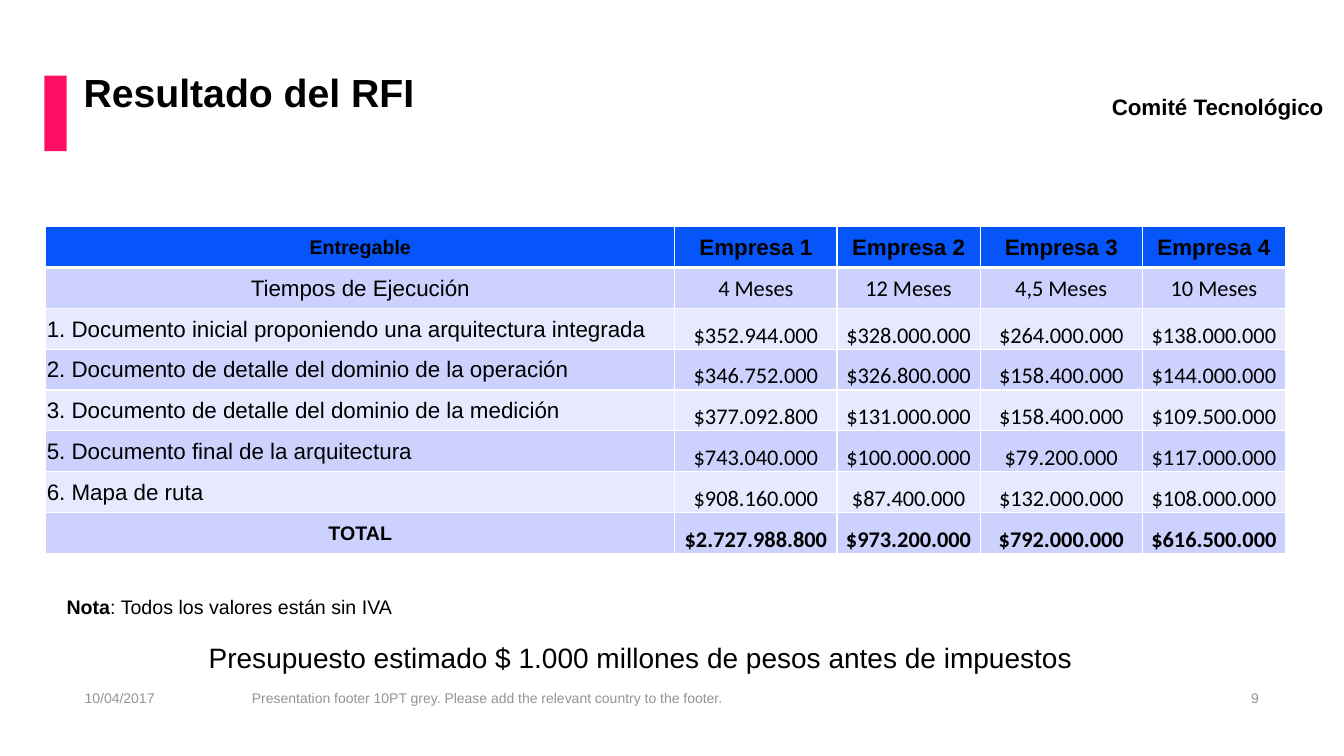
"""Build the RFI results slide: vendor price table, notes and footer."""
from dataclasses import dataclass

from lxml.etree import SubElement
from pptx import Presentation
from pptx.dml.color import RGBColor
from pptx.enum.shapes import MSO_SHAPE
from pptx.enum.text import MSO_ANCHOR, MSO_AUTO_SIZE, PP_ALIGN
from pptx.oxml.ns import qn
from pptx.slide import Slide
from pptx.table import _Cell
from pptx.text.text import TextFrame
from pptx.util import Pt

BLACK, GREY, WHITE = "000000", "949494", "FFFFFF"
PINK, BLUE = "FE0F64", "0655FA"
BANDS = ("E7E9FE", "CCD1FD")
COLUMN_WIDTHS = (449.28, 115.92, 102.24, 115.92, 102.24)
ROW_HEIGHT = 29.16
ROWS = (
    ("Entregable", "Empresa 1", "Empresa 2", "Empresa 3", "Empresa 4"),
    ("Tiempos de Ejecución", "4 Meses", "12 Meses", "4,5 Meses", "10 Meses"),
    ("1. Documento inicial proponiendo una arquitectura integrada",
     "$352.944.000", "$328.000.000", "$264.000.000", "$138.000.000"),
    ("2. Documento de detalle del dominio de la operación",
     "$346.752.000", "$326.800.000", "$158.400.000", "$144.000.000"),
    ("3. Documento de detalle del dominio de la medición",
     "$377.092.800", "$131.000.000", "$158.400.000", "$109.500.000"),
    ("5. Documento final de la arquitectura",
     "$743.040.000", "$100.000.000", "$79.200.000", "$117.000.000"),
    ("6. Mapa de ruta",
     "$908.160.000", "$87.400.000", "$132.000.000", "$108.000.000"),
    ("TOTAL", "$2.727.988.800", "$973.200.000", "$792.000.000", "$616.500.000"),
)


@dataclass(frozen=True)
class Label:
    text: str
    left: float
    top: float
    width: float
    height: float
    size: float
    color: str = BLACK
    bold: bool = False
    lead: str = ""
    align: PP_ALIGN = PP_ALIGN.LEFT
    anchor: MSO_ANCHOR = MSO_ANCHOR.TOP
    spacing: float = 1.0
    wrap: bool = True


def footer(text: str, left: float, width: float, align: PP_ALIGN = PP_ALIGN.LEFT) -> Label:
    return Label(text, left, 493.2, width, 12.24, 10, GREY, align=align,
                 anchor=MSO_ANCHOR.MIDDLE, spacing=0.9)


TITLE = Label("Resultado del RFI", 59.76, 52.56, 659.52, 30.96, 28, bold=True, spacing=0.9)
LABELS = (
    Label("Comité Tecnológico", 794.16, 66.24, 153.36, 19.44, 16, bold=True, wrap=False),
    footer("10/04/2017", 60.48, 118.8),
    footer("Presentation footer 10PT grey. Please add the relevant country to the footer.",
           180, 660.24),
    footer("9", 839.52, 59.76, PP_ALIGN.RIGHT),
    Label("Presupuesto estimado $ 1.000 millones de pesos antes de impuestos",
          149.04, 457.2, 673.92, 24.48, 20),
    Label(": Todos los valores están sin IVA", 47.52, 424.8, 495.36, 17.28, 14, lead="Nota"),
)


def rgb(color: str) -> RGBColor:
    return RGBColor.from_string(color)


def write_text(frame: TextFrame, text: str, *, size: float, font: str = "Arial",
               color: str = BLACK, bold: bool = False, lead: str = "",
               align: PP_ALIGN = PP_ALIGN.LEFT, spacing: float = 1.0) -> None:
    para = frame.paragraphs[0]
    para.alignment = align
    para.line_spacing = spacing
    for words, heavy in ((lead, True), (text, bold)):
        if words:
            span = para.add_run()
            span.text = words
            span.font.name = font
            span.font.size = Pt(size)
            span.font.bold = heavy
            span.font.color.rgb = rgb(color)


def draw_label(page: Slide, label: Label, is_title: bool = False) -> None:
    place = [Pt(value) for value in (label.left, label.top, label.width, label.height)]
    if is_title:
        box = page.shapes.title
        box.left, box.top, box.width, box.height = place
    else:
        box = page.shapes.add_textbox(*place)
    frame = box.text_frame
    frame.margin_left = frame.margin_top = frame.margin_right = frame.margin_bottom = 0
    frame.word_wrap = label.wrap
    frame.auto_size = MSO_AUTO_SIZE.NONE
    frame.vertical_anchor = label.anchor
    write_text(frame, label.text, size=label.size, color=label.color, bold=label.bold,
               lead=label.lead, align=label.align, spacing=label.spacing)


def draw_marker(page: Slide) -> None:
    marker = page.shapes.add_shape(MSO_SHAPE.RECTANGLE, Pt(31.68), Pt(54), Pt(15.84), Pt(54))
    marker.shadow.inherit = False
    marker.fill.solid()
    marker.fill.fore_color.rgb = rgb(PINK)
    marker.line.fill.background()


def set_borders(cell: _Cell, top: float, bottom: float) -> None:
    properties = cell._tc.get_or_add_tcPr()
    for side, width in (("L", 1), ("R", 1), ("T", top), ("B", bottom)):
        line = SubElement(properties, qn(f"a:ln{side}"), w=str(Pt(width)))
        SubElement(SubElement(line, qn("a:solidFill")), qn("a:srgbClr"), val=WHITE)


def fill_cell(cell: _Cell, text: str, row: int, column: int) -> None:
    is_header, is_total = row == 0, row == len(ROWS) - 1
    is_amount = row > 1 and column > 0
    is_deliverable = row > 1 and column == 0 and not is_total
    is_corner = column == 0 and (is_header or is_total)
    set_borders(cell, top=3 if row == 1 else 1, bottom=3 if is_header else 1)
    cell.fill.solid()
    cell.fill.fore_color.rgb = rgb(BLUE if is_header else BANDS[row % 2])
    cell.margin_left = cell.margin_right = cell.margin_top = Pt(0.75)
    cell.margin_bottom = 0
    cell.vertical_anchor = MSO_ANCHOR.BOTTOM if is_amount else MSO_ANCHOR.MIDDLE
    write_text(cell.text_frame, text, size=14 if is_corner else 16,
               font="Arial" if is_header or column == 0 else "Calibri",
               bold=is_header or is_total,
               align=PP_ALIGN.LEFT if is_deliverable else PP_ALIGN.CENTER)


def draw_table(page: Slide) -> None:
    table = page.shapes.add_table(len(ROWS), len(COLUMN_WIDTHS), Pt(32.7), Pt(162),
                                  Pt(sum(COLUMN_WIDTHS)), Pt(ROW_HEIGHT * len(ROWS))).table
    table.first_row = table.horz_banding = False
    for column, width in zip(table.columns, COLUMN_WIDTHS):
        column.width = Pt(width)
    for row, texts in enumerate(ROWS):
        table.rows[row].height = Pt(ROW_HEIGHT)
        for column, text in enumerate(texts):
            fill_cell(table.cell(row, column), text, row, column)


def main() -> None:
    deck = Presentation()
    deck.slide_width, deck.slide_height = Pt(960), Pt(540)
    page = deck.slides.add_slide(deck.slide_layouts[5])
    draw_marker(page)
    draw_label(page, TITLE, is_title=True)
    draw_table(page)
    for label in LABELS:
        draw_label(page, label)
    deck.save("out.pptx")


if __name__ == "__main__":
    main()
